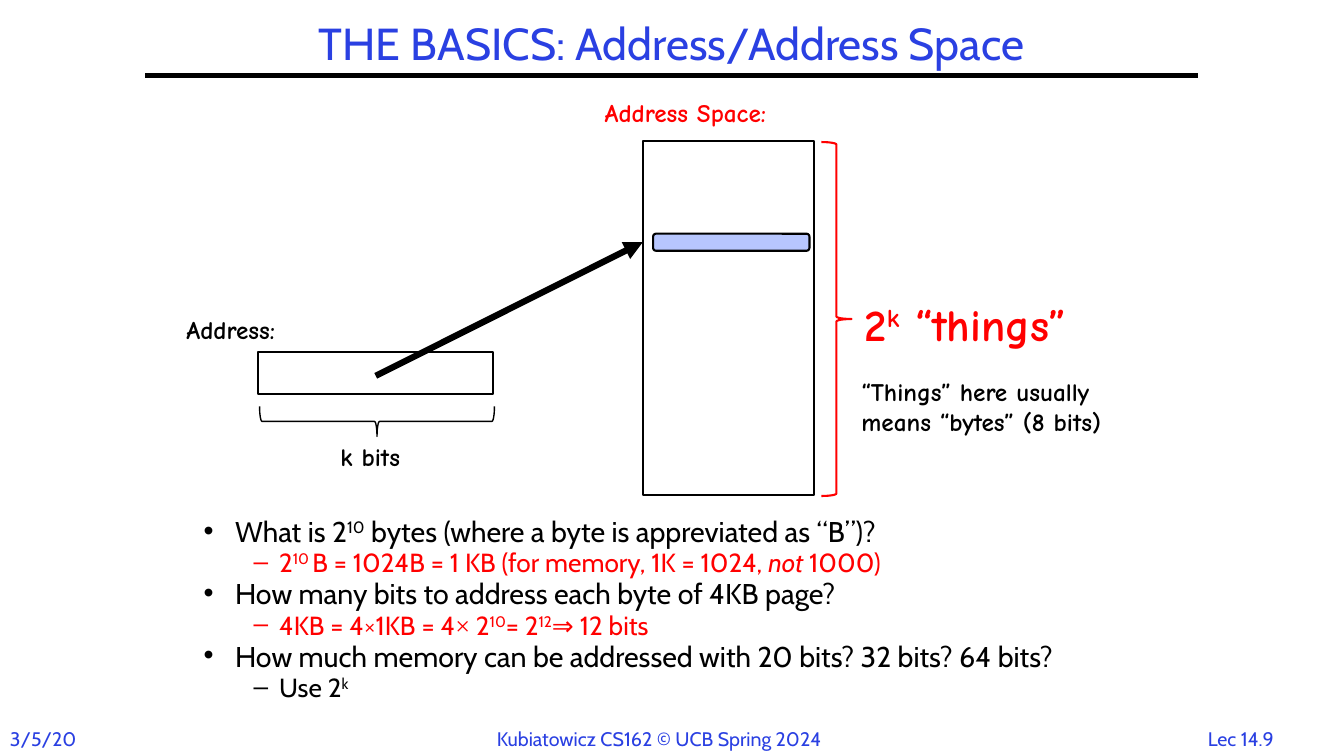
from dataclasses import dataclass

import pptx
import pptx.dml.color
import pptx.enum.shapes
import pptx.enum.text
import pptx.oxml
import pptx.oxml.ns
import pptx.util

Cm, Pt = pptx.util.Cm, pptx.util.Pt
SHAPE = pptx.enum.shapes.MSO_SHAPE
ALIGN = pptx.enum.text.PP_ALIGN
ANCHOR = pptx.enum.text.MSO_ANCHOR


@dataclass(frozen=True)
class Theme:
    blue: str = "2A40E2"
    black: str = "000000"
    red: str = "FF0000"
    white: str = "FFFFFF"
    cell: str = "B7C6FE"
    sans: str = "Cabin"
    hand: str = "Comic Neue"
    serif: str = "Times New Roman"
    title: float = 32
    question: float = 20.4
    answer: float = 18.7
    label: float = 18
    footer: float = 14


T = Theme()

# Each line: level, colour, runs of (text, style)
QUESTIONS = [
    (0, T.black, [("What is 2", ""), ("10", "sup"),
                  (" bytes (where a byte is appreviated as “B”)?", "")]),
    (1, T.red, [("2", ""), ("10 ", "sup"), ("B = 1024B = 1 KB (for memory, 1K = 1024, ", ""),
                ("not", "italic"), (" 1000)", "")]),
    (0, T.black, [("How many bits to address each byte of 4KB page?", "")]),
    (1, T.red, [("4KB = 4×1KB = 4", ""), ("×", "serif"), (" 2", ""), ("10", "sup"),
                ("= 2", ""), ("12", "sup"), ("⇒ 12 bits", "")]),
    (0, T.black, [("How much memory can be addressed with 20 bits? 32 bits? 64 bits?", "")]),
    (1, T.black, [("Use 2", ""), ("k", "sup")]),
]


def rgb(color):
    return pptx.dml.color.RGBColor.from_string(color)


def add_run(p, text, size, color, font=T.sans, style=""):
    r = p.add_run()
    r.text = text
    r.font.name = T.serif if style == "serif" else font
    r.font.size = Pt(size)
    r.font.color.rgb = rgb(color)
    r.font.bold = font == T.hand
    if style == "italic":
        r.font.italic = True
    if style == "sup":
        r.font._element.set("baseline", "30000")


def place(sp, left, top, width, height):
    sp.left, sp.top, sp.width, sp.height = Cm(left), Cm(top), Cm(width), Cm(height)


def add_text(s, box, runs, size, color, font=T.hand, align=ALIGN.LEFT):
    tf = s.shapes.add_textbox(*map(Cm, box)).text_frame
    tf.word_wrap = True
    p = tf.paragraphs[0]
    p.alignment = align
    for text, style in runs:
        for i, line in enumerate(text.split("\n")):
            if i:
                p.add_line_break()
            add_run(p, line, size, color, font, style)


def add_box(s, kind, box, fill=T.white, line=T.black, weight=1.5):
    sp = s.shapes.add_shape(kind, *map(Cm, box))
    sp.shadow.inherit = False
    sp.fill.solid()
    sp.fill.fore_color.rgb = rgb(fill)
    sp.line.color.rgb = rgb(line)
    sp.line.width = Pt(weight)
    return sp


def add_line(s, start, end, weight, arrow=False):
    cx = s.shapes.add_connector(pptx.enum.shapes.MSO_CONNECTOR.STRAIGHT,
                                *map(Cm, start + end))
    cx.line.color.rgb = rgb(T.black)
    cx.line.width = Pt(weight)
    if arrow:
        tail = pptx.oxml.ns.qn("a:tailEnd")
        cx.line._get_or_add_ln().append(cx._element.makeelement(tail, {"type": "triangle"}))
    effects = pptx.oxml.ns.qn("a:effectLst")
    cx._element.spPr.append(cx._element.makeelement(effects, {}))


def add_title(s, left, top, width, height):
    sp = s.shapes.title
    place(sp, left, top, width, height)
    tf = sp.text_frame
    tf.auto_size = pptx.enum.text.MSO_AUTO_SIZE.NONE
    tf.vertical_anchor = ANCHOR.MIDDLE
    p = tf.paragraphs[0]
    p.alignment, p.line_spacing = ALIGN.CENTER, 0.9
    add_run(p, "THE BASICS: Address/Address Space", T.title, T.blue)
    rule = top + height
    add_line(s, (left - 2.69, rule), (left + width + 2.69, rule), 3)


def add_address(s, left, top, width, height):
    """Address register with its label and its k-bit brace."""
    add_box(s, SHAPE.RECTANGLE, (left, top, width, height))
    add_text(s, (left - 2.05, top - 1.06, 3.3, 1.02), [("Address:", "")], T.label, T.black)
    depth = 0.76
    middle, brace_y = left + width / 2, top + height + 0.69
    brace = add_box(s, SHAPE.RIGHT_BRACE,
                    (middle - depth / 2 + 0.04, brace_y - width / 2, depth, width), weight=1)
    brace.rotation = 90
    add_text(s, (middle - 1.13, top + height + 1.07, 2.31, 1.02),
             [("k bits", "")], T.label, T.black)


def add_address_space(s, left, top, width, height):
    """Memory column with one addressed cell, its brace and notes."""
    right = left + width
    add_text(s, (left - 1.21, top - 1.22, 5.41, 1.02),
             [("Address Space:", "")], T.label, T.red)
    add_box(s, SHAPE.RECTANGLE, (left, top, width, height))
    add_box(s, SHAPE.ROUNDED_RECTANGLE, (left + 0.26, top + 2.33, width - 0.38, 0.43), T.cell)
    add_box(s, SHAPE.RIGHT_BRACE, (right + 0.18, top + 0.02, 0.76, height), line=T.red)
    add_text(s, (right + 1.02, top + 3.78, 6.38, 1.63),
             [("2", ""), ("k", "sup"), (" “things”", "")], T.title, T.red)
    add_text(s, (right + 0.94, top + 5.79, 7.49, 1.8),
             [("“Things” here usually\nmeans “bytes” (8 bits)", "")], T.label, T.black)


def set_bullet(p, char, left, hanging):
    pPr = p._p.get_or_add_pPr()
    pPr.set("marL", str(Cm(left)))
    pPr.set("indent", str(-Cm(hanging)))
    pPr.append(pPr.makeelement(pptx.oxml.ns.qn("a:buChar"), {"char": char}))


def add_questions(s, left, top, width, height):
    sp = s.placeholders[1]
    place(sp, left, top, width, height)
    tf = sp.text_frame
    tf.auto_size = pptx.enum.text.MSO_AUTO_SIZE.NONE
    for i, (level, color, runs) in enumerate(QUESTIONS):
        p = tf.add_paragraph() if i else tf.paragraphs[0]
        size = T.answer if level else T.question
        p.level, p.line_spacing, p.space_before = level, 0.7, Pt(size * 0.3)
        set_bullet(p, *(("–", 1.9, 0.64) if level else ("•", 0.79, 0.79)))
        for text, style in runs:
            add_run(p, text, size, color, style=style)


def add_footer(s, left, top, width, height):
    parts = [("3/5/20", left, 2.44, ALIGN.LEFT),
             ("Kubiatowicz CS162 © UCB Spring 2024", left + 12.27, 9.35, ALIGN.LEFT),
             ("Lec 14.9", left + width - 2.74, 2.74, ALIGN.CENTER)]
    for text, x, w, align in parts:
        add_text(s, (x, top, w, height), [(text, "")], T.footer, T.blue, T.sans, align)


def main():
    prs = pptx.Presentation()
    prs.slide_width, prs.slide_height = Cm(33.87), Cm(19.05)
    s = prs.slides.add_slide(prs.slide_layouts[1])
    add_title(s, 6.35, 0.43, 21.16, 1.47)
    add_questions(s, 4.88, 13.06, 24.1, 4.98)
    add_address(s, 6.5, 8.86, 5.92, 1.07)
    add_address_space(s, 16.2, 3.56, 4.32, 8.92)
    add_line(s, (9.47, 9.47), (16.2, 6.1), 4.5, arrow=True)
    add_footer(s, 0, 18.19, 32.64, 0.86)
    prs.save("out.pptx")


if __name__ == "__main__":
    main()
